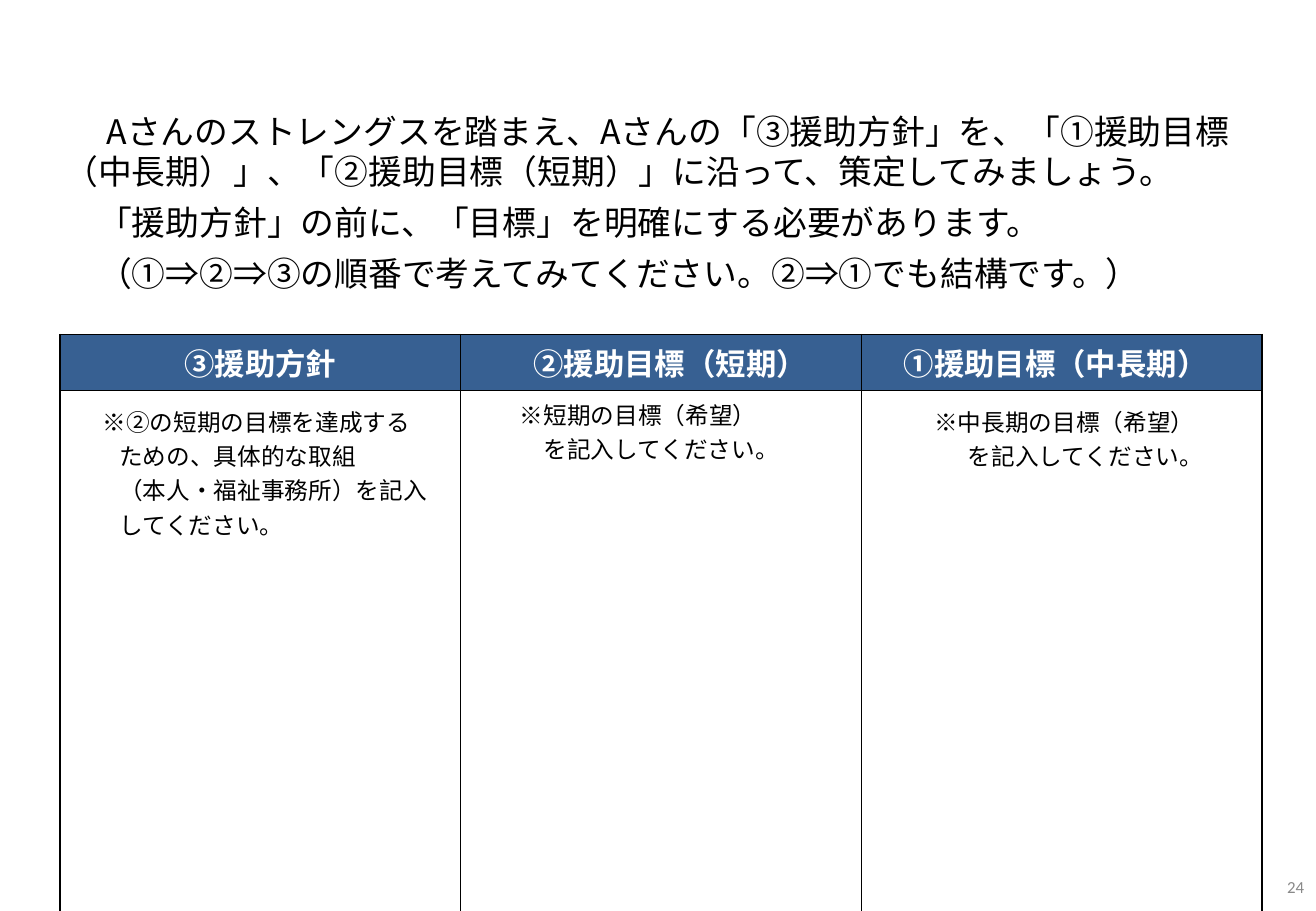
import pptx
import pptx.dml.color
import pptx.enum.shapes
import pptx.enum.text
import pptx.util
from lxml import etree

Pt = pptx.util.Pt
PP_ALIGN = pptx.enum.text.PP_ALIGN
MIDDLE = pptx.enum.text.MSO_ANCHOR.MIDDLE
A = "{http://schemas.openxmlformats.org/drawingml/2006/main}"

COLORS = {"white": "FFFFFF", "black": "000000", "header": "376092", "number": "898989"}
JAPANESE = "Noto Sans CJK JP"


def rgb(name):
    return pptx.dml.color.RGBColor.from_string(COLORS[name])


def format_paragraph(paragraph, size, color, font=JAPANESE, bold=False, left=0, first=0):
    """Format all runs and set the left and first-line indents in points."""
    properties = paragraph._p.get_or_add_pPr()
    properties.set("marL", str(Pt(left)))
    properties.set("indent", str(Pt(first)))
    for run in paragraph.runs:
        run.font.size = Pt(size)
        run.font.bold = bold
        run.font.name = font
        run.font.color.rgb = rgb(color)
        etree.SubElement(run._r.get_or_add_rPr(), A + "ea", typeface=font)


prs = pptx.Presentation()
prs.slide_width, prs.slide_height = Pt(780), Pt(540)
slide = prs.slides.add_slide(prs.slide_layouts[6])

# Slide number
number = slide.shapes.add_textbox(Pt(750.5), Pt(511), Pt(29.5), Pt(29)).text_frame
number.word_wrap = True
number.vertical_anchor = MIDDLE
number.text = "24"
number.paragraphs[0].alignment = PP_ALIGN.RIGHT
format_paragraph(number.paragraphs[0], 10, "number", font="Calibri")

# Instructions: text and first-line indent
instructions = [
    ("Aさんのストレングスを踏まえ、Aさんの「③援助方針」を、「①援助目標（中長期）」、"
     "「②援助目標（短期）」に沿って、策定してみましょう。", 25),
    ("「援助方針」の前に、「目標」を明確にする必要があります。", 20),
    ("（①⇒②⇒③の順番で考えてみてください。②⇒①でも結構です。）", 20),
]
panel = slide.shapes.add_shape(
    pptx.enum.shapes.MSO_SHAPE.RECTANGLE, Pt(31), Pt(52), Pt(718.5), Pt(135))
panel.shadow.inherit = False
panel.fill.solid()
panel.fill.fore_color.rgb = rgb("white")
panel.line.fill.background()
panel.text_frame.word_wrap = True
panel.text_frame.vertical_anchor = MIDDLE
panel.text_frame.text = "\n".join(text for text, first in instructions)
for paragraph, (text, first) in zip(panel.text_frame.paragraphs, instructions):
    paragraph.alignment = PP_ALIGN.LEFT
    paragraph.space_before = Pt(6)
    paragraph.line_spacing = Pt(24)
    format_paragraph(paragraph, 20, "black", first=first)

# Worksheet: heading, its alignment and indent, top margin of the hints, hints with indents
worksheet = [
    ("③援助方針", PP_ALIGN.CENTER, 0, 7.6,
     [("※②の短期の目標を達成する", 18), ("ための、具体的な取組", 28),
      ("（本人・福祉事務所）を記入\vしてください。", 28)]),
    ("②援助目標（短期）", PP_ALIGN.LEFT, 36, 3.6,
     [("※短期の目標（希望）", 28), ("を記入してください。", 42)]),
    ("①援助目標（中長期）", PP_ALIGN.LEFT, 18, 7.6,
     [("※中長期の目標（希望）", 36), ("を記入してください。", 56)]),
]
table = slide.shapes.add_table(2, 3, Pt(35.5), Pt(198.3), Pt(712.5), Pt(346.3)).table
table.rows[0].height, table.rows[1].height = Pt(33.3), Pt(313)

for column, (heading, alignment, indent, top, hints) in enumerate(worksheet):
    table.columns[column].width = Pt(237.5)
    header, body = table.cell(0, column), table.cell(1, column)

    header.text_frame.text = heading
    header.text_frame.paragraphs[0].alignment = alignment
    format_paragraph(header.text_frame.paragraphs[0], 18, "white", bold=True, left=indent)

    body.text_frame.text = "\n".join(hint for hint, left in hints)
    body.margin_top = Pt(top)
    for paragraph, (hint, left) in zip(body.text_frame.paragraphs, hints):
        format_paragraph(paragraph, 14, "black", left=left)

    for cell, fill in ((header, "header"), (body, "white")):
        cell.fill.solid()
        cell.fill.fore_color.rgb = rgb(fill)
        properties = cell._tc.get_or_add_tcPr()
        for position, side in enumerate(("lnL", "lnR", "lnT", "lnB")):
            border = etree.Element(A + side, w=str(Pt(1)))
            solid = etree.SubElement(border, A + "solidFill")
            etree.SubElement(solid, A + "srgbClr", val=COLORS["black"])
            properties.insert(position, border)

prs.save("out.pptx")
